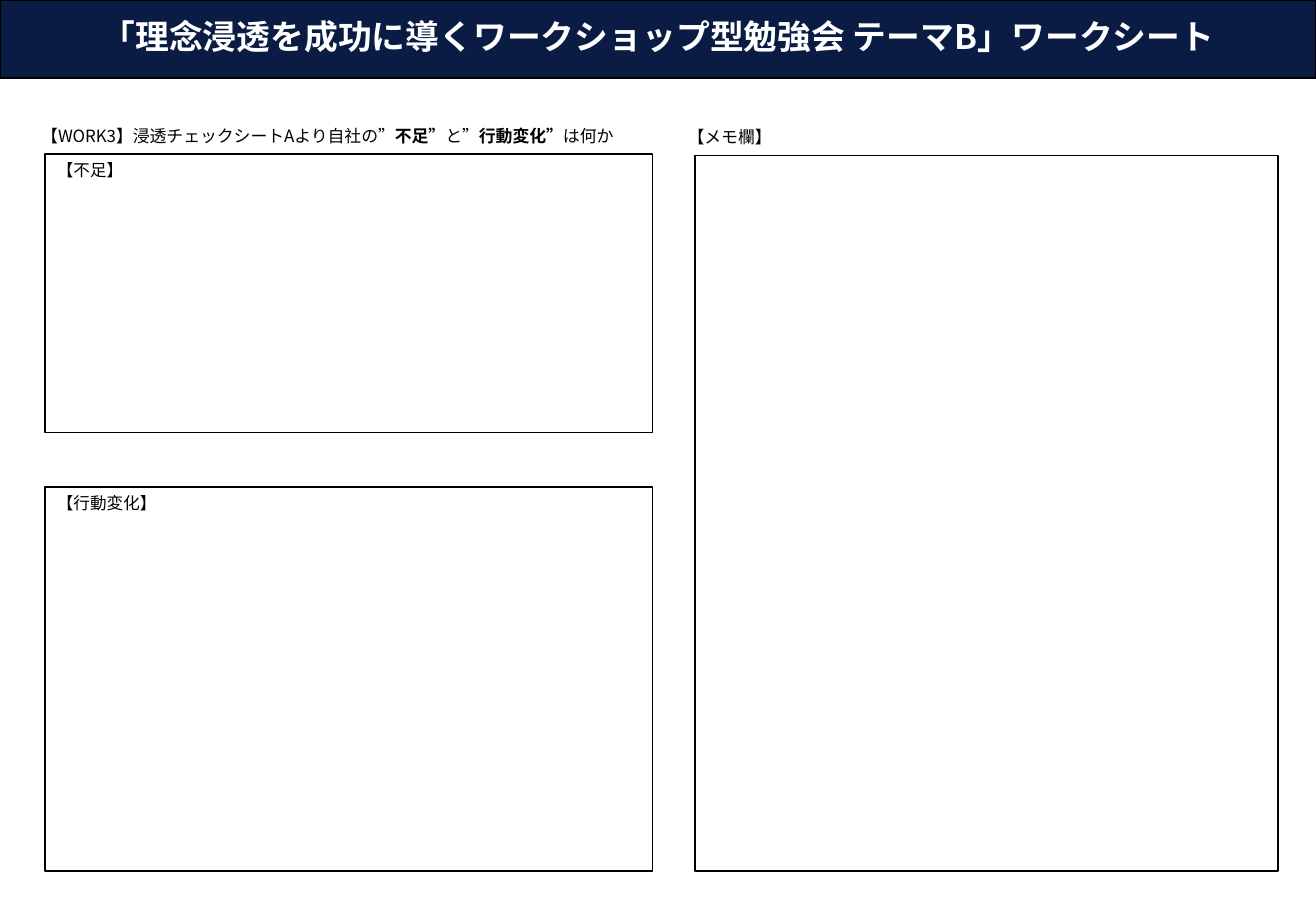
from lxml.etree import SubElement
from pptx import Presentation
from pptx.dml.color import RGBColor
from pptx.enum.shapes import MSO_SHAPE as Shape
from pptx.enum.text import MSO_ANCHOR as Anchor, MSO_AUTO_SIZE as AutoSize, PP_ALIGN as Align
from pptx.oxml.ns import qn
from pptx.util import Inches, Pt

FONT = "Noto Sans CJK JP"
NAVY, BLACK, WHITE = "0B1C44", "000000", "FFFFFF"


def color(value):
    return RGBColor.from_string(value)


class Worksheet:
    """Holds the worksheet style and the slide being filled."""

    def __init__(self, presentation):
        self.slide = presentation.slides.add_slide(presentation.slide_layouts[5])

    def add_text(self, shape, runs, size, text_color=BLACK, align=Align.LEFT, anchor=Anchor.TOP):
        frame = shape.text_frame
        frame.word_wrap = True
        frame.auto_size = AutoSize.NONE
        frame.vertical_anchor = anchor
        paragraph = frame.paragraphs[0]
        paragraph.alignment = align
        for text, bold in runs:
            run = paragraph.add_run()
            run.text = text
            font = run.font
            font.size, font.bold, font.name = Pt(size), bold, FONT
            font.color.rgb = color(text_color)
            SubElement(font._element, qn("a:ea"), typeface=FONT)
        return paragraph

    def outline(self, shape, fill=None):
        if fill:
            shape.fill.solid()
            shape.fill.fore_color.rgb = color(fill)
        else:
            shape.fill.background()
        shape.line.color.rgb = color(BLACK)
        shape.line.width = Pt(1)

    def title(self, text, width, height):
        shape = self.slide.shapes.title
        shape.left, shape.top = Inches(0), Inches(0)
        shape.width, shape.height = Inches(width), Inches(height)
        self.outline(shape, NAVY)
        paragraph = self.add_text(shape, [(text, True)], 20, WHITE, Align.CENTER, Anchor.MIDDLE)
        paragraph.line_spacing = 0.9

    def heading(self, left, top, width, height, runs, inset_x=0.1, inset_y=0.05):
        box = self.slide.shapes.add_textbox(*map(Inches, (left, top, width, height)))
        frame = box.text_frame
        frame.margin_left = frame.margin_right = Inches(inset_x)
        frame.margin_top = frame.margin_bottom = Inches(inset_y)
        paragraph = self.add_text(box, runs, 10)
        paragraph.line_spacing = 0.9
        paragraph.space_before = Pt(10)

    def panel(self, left, top, width, height, label=None, fill=None):
        shape = self.slide.shapes.add_shape(
            Shape.RECTANGLE, *map(Inches, (left, top, width, height)))
        shape.shadow.inherit = False
        self.outline(shape, fill)
        if label:
            self.add_text(shape, [(label, False)], 9.8)


def main():
    presentation = Presentation()
    presentation.slide_width, presentation.slide_height = Inches(10.83), Inches(7.5)
    sheet = Worksheet(presentation)
    sheet.title("「理念浸透を成功に導くワークショップ型勉強会 テーマB」ワークシート", 10.83, 0.64)
    sheet.heading(0.26, 1.01, 5.3, 0.26, [
        ("【WORK3】浸透チェックシートAより自社の”", False),
        ("不足”", True),
        ("と”", False),
        ("行動変化”", True),
        ("は何か", False),
    ], 0.08, 0.04)
    for label, top, height in (("【不足】", 1.27, 2.29), ("【行動変化】", 4.01, 3.16)):
        sheet.panel(0.37, top, 5, height, label, WHITE)
    sheet.panel(5.72, 1.28, 4.8, 5.89)
    sheet.heading(5.56, 1.01, 1.85, 0.53, [("【メモ欄】", False)])
    presentation.save("out.pptx")


if __name__ == "__main__":
    main()
